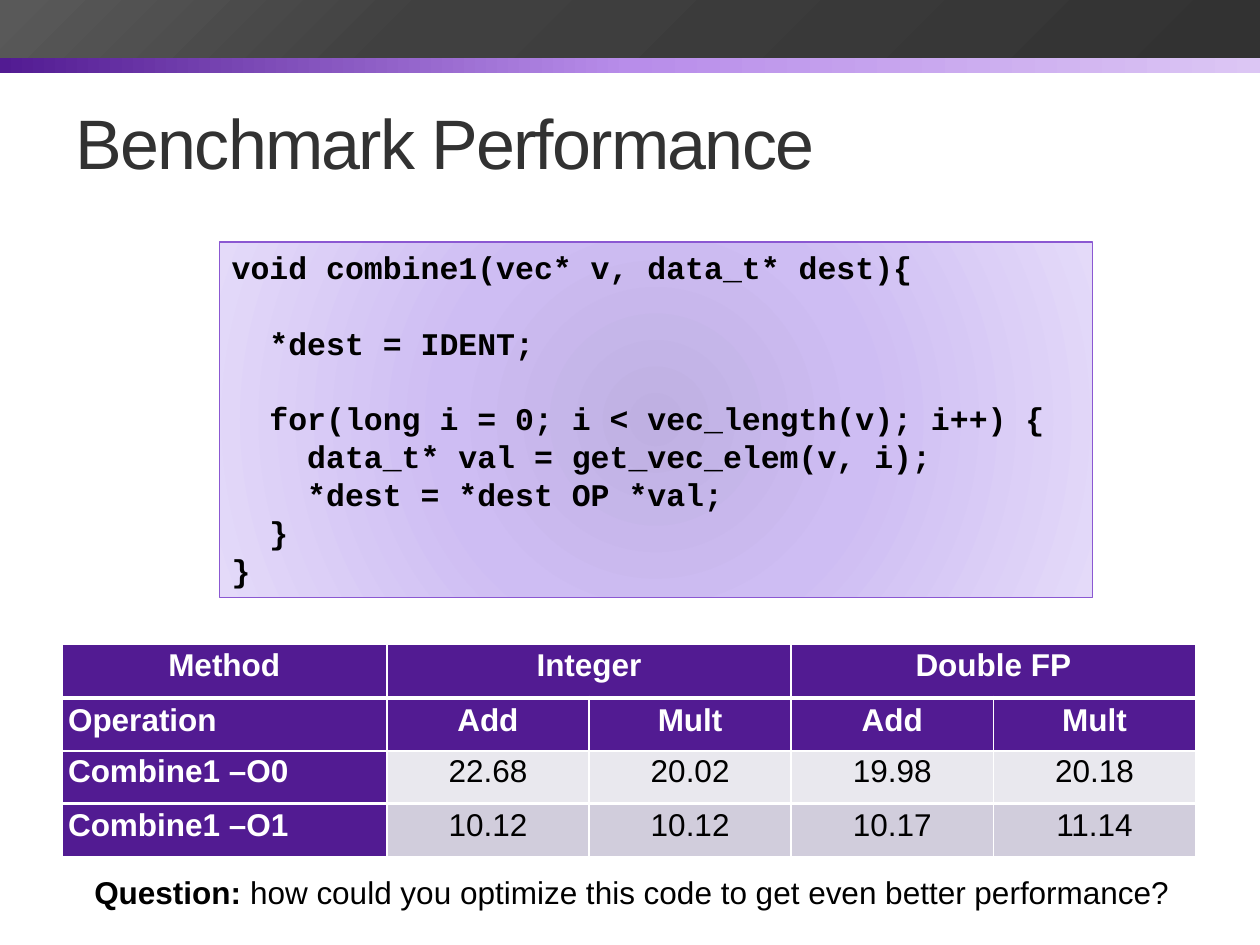
from lxml.etree import SubElement
from pptx import Presentation
from pptx.dml.color import RGBColor
from pptx.enum.shapes import MSO_SHAPE
from pptx.enum.text import MSO_ANCHOR, PP_ALIGN
from pptx.oxml.ns import qn
from pptx.util import Inches, Pt

BLACK = RGBColor(0x00, 0x00, 0x00)
WHITE = RGBColor(0xFF, 0xFF, 0xFF)
CHARCOAL = RGBColor(0x32, 0x32, 0x32)
PURPLE = RGBColor(0x52, 0x1B, 0x92)
OUTLINE = RGBColor(0x8B, 0x58, 0xD2)
LIGHT_ROW = RGBColor(0xE9, 0xE8, 0xEE)
DARK_ROW = RGBColor(0xD1, 0xCD, 0xDC)

TITLE = "Benchmark Performance"
CODE = [
    "void combine1(vec* v, data_t* dest){",
    "",
    "  *dest = IDENT;",
    "",
    "  for(long i = 0; i < vec_length(v); i++) {",
    "    data_t* val = get_vec_elem(v, i);",
    "    *dest = *dest OP *val;",
    "  }",
    "}",
]
QUESTION = [
    ("Question: ", True),
    ("how could you optimize this code to get even better performance?", False),
]
HEADER = [
    ["Method", "Integer", "", "Double FP", ""],
    ["Operation", "Add", "Mult", "Add", "Mult"],
]
UNOPTIMIZED = [
    ["", "", "", "", ""],
    ["Combine1 –O0", "22.68", "20.02", "19.98", "20.18"],
]
OPTIMIZED = [["Combine1 –O1", "10.12", "10.12", "10.17", "11.14"]]
TABLES = [
    (5.53, UNOPTIMIZED, [0.42, 0.42], [DARK_ROW, LIGHT_ROW], BLACK),
    (5.11, HEADER, [0.43, 0.42], [PURPLE, PURPLE], WHITE),
    (6.38, OPTIMIZED, [0.42], [DARK_ROW], BLACK),
]
BARS = [
    (0.24, 0.34, [(0, "521B92"), (50, "B88DEA"), (100, "DCC6F4")], 0),
    (0, 0.46, [(0, "323232"), (66, "404040"), (99, "595959")], 225),
]
CODE_STOPS = [(0, "BFB0E2"), (45, "CEBDF3"), (100, "E4DAF9")]

TABLE_LEFT, TABLE_WIDTH, LABEL_WIDTH = 0.49, 9, 2.58
THIN, THICK = 0.96, 3


def set_font(font, color, bold=False, name="Arial", size=18):
    font.name, font.size, font.bold = name, Pt(size), bold
    font.color.rgb = color


def add_gradient_box(page, left, top, width, height, stops, angle=None):
    box = page.shapes.add_shape(
        MSO_SHAPE.RECTANGLE, Inches(left), Inches(top), Inches(width), Inches(height))
    box.shadow.inherit = False
    box.line.fill.background()
    box.fill.gradient()
    gradient = box.element.spPr.find(qn("a:gradFill"))
    for child in list(gradient):
        gradient.remove(child)
    stop_list = SubElement(gradient, qn("a:gsLst"))
    for position, color in stops:
        stop = SubElement(stop_list, qn("a:gs"), pos=str(position * 1000))
        SubElement(stop, qn("a:srgbClr"), val=color)
    if angle is None:
        center = SubElement(gradient, qn("a:path"), path="circle")
        SubElement(center, qn("a:fillToRect"), l="50000", t="50000", r="50000", b="50000")
    else:
        SubElement(gradient, qn("a:lin"), ang=str(angle * 60000), scaled="0")
    return box


def add_borders(cell, bottom):
    properties = cell._tc.get_or_add_tcPr()
    for side, width in (("L", THIN), ("R", THIN), ("T", THIN), ("B", bottom)):
        line = SubElement(properties, qn(f"a:ln{side}"), w=str(Pt(width)))
        SubElement(SubElement(line, qn("a:solidFill")), qn("a:srgbClr"), val=str(WHITE))


def format_cell(cell, text, fill, color, bold, centered):
    cell.fill.solid()
    cell.fill.fore_color.rgb = fill
    cell.margin_left = cell.margin_right = Inches(0.05)
    cell.margin_top = cell.margin_bottom = Inches(0.05)
    para = cell.text_frame.paragraphs[0]
    para.text = text
    para.alignment = PP_ALIGN.CENTER if centered else PP_ALIGN.LEFT
    para.line_spacing = 0.95
    para.space_before = Pt(9)
    set_font(para.font, color, bold)


def add_result_table(page, top, rows, heights, fills, color):
    columns = len(rows[0])
    table = page.shapes.add_table(
        len(rows), columns, Inches(TABLE_LEFT), Inches(top),
        Inches(TABLE_WIDTH), Inches(sum(heights))).table
    table.first_row = table.horz_banding = False
    value_width = (TABLE_WIDTH - LABEL_WIDTH) / (columns - 1)
    for index, column in enumerate(table.columns):
        column.width = Inches(value_width if index else LABEL_WIDTH)
    is_header = rows is HEADER
    for r, row in enumerate(rows):
        table.rows[r].height = Inches(heights[r])
        for c, text in enumerate(row):
            cell = table.cell(r, c)
            add_borders(cell, THICK if is_header and r == 0 else THIN)
            is_label = c == 0
            format_cell(cell, text,
                        PURPLE if is_label else fills[r],
                        WHITE if is_label else color,
                        is_label or is_header,
                        not is_label or text == "Method")
    if is_header:
        for first in (1, 3):
            table.cell(0, first).merge(table.cell(0, first + 1))


def add_title(page):
    title = page.shapes.title
    title.left, title.top = Inches(0.5), Inches(0.58)
    title.width, title.height = Inches(9), Inches(1.08)
    title.text_frame.text = TITLE
    title.text_frame.vertical_anchor = MSO_ANCHOR.MIDDLE
    para = title.text_frame.paragraphs[0]
    para.alignment = PP_ALIGN.LEFT
    set_font(para.font, CHARCOAL, size=40)
    para.runs[0].font._element.set("spc", "-100")


def add_code(page):
    box = add_gradient_box(page, 1.74, 1.92, 6.93, 2.82, CODE_STOPS)
    box.line.color.rgb = OUTLINE
    box.line.width = Pt(0.75)
    frame = box.text_frame
    frame.word_wrap = True
    frame.vertical_anchor = MSO_ANCHOR.TOP
    frame.text = "\n".join(CODE)
    for para in frame.paragraphs:
        para.alignment = PP_ALIGN.LEFT
        set_font(para.font, BLACK, True, "Courier New")


def add_question(page):
    box = page.shapes.add_textbox(Inches(0.65), Inches(6.88), Inches(8.73), Inches(0.4))
    box.text_frame.word_wrap = False
    para = box.text_frame.paragraphs[0]
    for text, bold in QUESTION:
        span = para.add_run()
        span.text = text
        set_font(span.font, BLACK, bold)


def main():
    deck = Presentation()
    deck.slide_width, deck.slide_height = Inches(10), Inches(7.5)
    page = deck.slides.add_slide(deck.slide_layouts[5])
    for top, height, stops, angle in BARS:
        add_gradient_box(page, 0, top, 10, height, stops, angle)
    add_title(page)
    add_code(page)
    for top, rows, heights, fills, color in TABLES:
        add_result_table(page, top, rows, heights, fills, color)
    add_question(page)
    deck.save("out.pptx")


if __name__ == "__main__":
    main()
